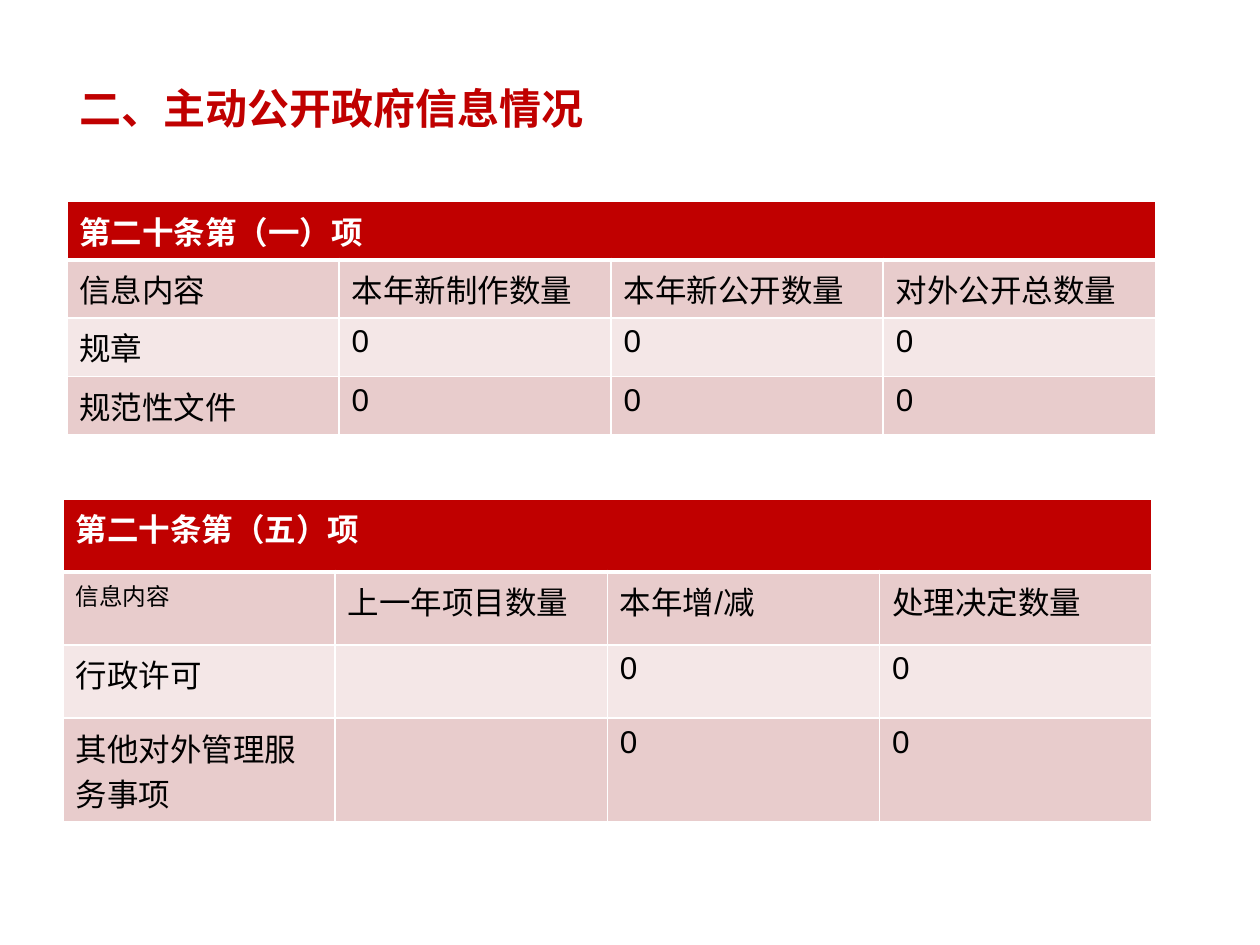
from lxml import etree
from pptx import Presentation
from pptx.dml.color import RGBColor
from pptx.enum.text import MSO_ANCHOR as Anchor, PP_ALIGN as Align
from pptx.oxml.ns import qn
from pptx.util import Inches, Pt

RED = RGBColor(0xC0, 0x00, 0x00)
WHITE = RGBColor(0xFF, 0xFF, 0xFF)
BLACK = RGBColor(0x00, 0x00, 0x00)
DARK_BAND = RGBColor(0xE8, 0xCC, 0xCC)
LIGHT_BAND = RGBColor(0xF4, 0xE7, 0xE7)
LATIN_FONT = "Arial"
CHINESE_FONT = "Noto Sans CJK SC"


class ReportSlide:
    def __init__(self, deck):
        self.page = deck.slides.add_slide(deck.slide_layouts[5])

    def add_text(self, frame, text, color, name=LATIN_FONT, size=18, bold=False):
        para = frame.paragraphs[0]
        para.alignment = Align.LEFT
        span = para.add_run()
        span.text = text
        style = {"name": name, "size": Pt(size), "bold": bold}
        for key, value in style.items():
            setattr(span.font, key, value)
        span.font.color.rgb = color
        properties = span._r.get_or_add_rPr()
        etree.SubElement(properties, qn("a:ea"), typeface=CHINESE_FONT)
        return para

    def title(self, text, left, top, width, height):
        box = self.page.shapes.title
        place = {"left": left, "top": top, "width": width, "height": height}
        for key, value in place.items():
            setattr(box, key, Inches(value))
        box.text_frame.word_wrap = True
        box.text_frame.vertical_anchor = Anchor.MIDDLE
        para = self.add_text(box.text_frame, text, RED, CHINESE_FONT, 24, True)
        para.line_spacing = 0.9

    def borders(self, cell, **widths):
        """Draw white cell edges; widths are points keyed by L, R, T and B."""
        properties = cell._tc.get_or_add_tcPr()
        for side in "LRTB":
            line = etree.SubElement(properties, qn(f"a:ln{side}"),
                                    w=str(int(Pt(widths.get(side, 1)))))
            fill = etree.SubElement(line, qn("a:solidFill"))
            etree.SubElement(fill, qn("a:srgbClr"), val=str(WHITE))

    def table(self, heading, rows, left, top, heights, small_cells=()):
        """Add a banded table under a merged heading; small_cells use 13.5 pt."""
        columns, column_width = len(rows[0]), 2.16
        grid = self.page.shapes.add_table(
            len(heights), columns, Inches(left), Inches(top),
            Inches(columns * column_width), Inches(sum(heights))).table
        for column in grid.columns:
            column.width = Inches(column_width)
        for row, height in zip(grid.rows, heights):
            row.height = Inches(height)
        grid.cell(0, 0).merge(grid.cell(0, columns - 1))

        for r, row in enumerate([[heading] + [""] * (columns - 1)] + rows):
            band = RED if r == 0 else DARK_BAND if r % 2 else LIGHT_BAND
            for c, text in enumerate(row):
                cell = grid.cell(r, c)
                self.borders(cell, T=3 if r == 1 else 1, B=3 if r == 0 else 1)
                cell.fill.solid()
                cell.fill.fore_color.rgb = band
                if text:
                    self.add_text(cell.text_frame, text, BLACK if r else WHITE,
                                  size=13.5 if (r, c) in small_cells else 18,
                                  bold=r == 0)


def main():
    deck = Presentation()
    deck.slide_width, deck.slide_height = Inches(10), Inches(7.5)
    slide = ReportSlide(deck)
    slide.title("二、主动公开政府信息情况", 0.53, 0.56, 6.06, 0.64)
    slide.table("第二十条第（一）项", [
        ["信息内容", "本年新制作数量", "本年新公开数量", "对外公开总数量"],
        ["规章", "0", "0", "0"],
        ["规范性文件", "0", "0", "0"],
    ], 0.53, 1.6, [0.42] * 4)
    slide.table("第二十条第（五）项", [
        ["信息内容", "上一年项目数量", "本年增/减", "处理决定数量"],
        ["行政许可", "", "0", "0"],
        ["其他对外管理服务事项", "", "0", "0"],
    ], 0.5, 3.96, [0.58] * 3 + [0.76], small_cells={(1, 0)})
    deck.save("out.pptx")


if __name__ == "__main__":
    main()
